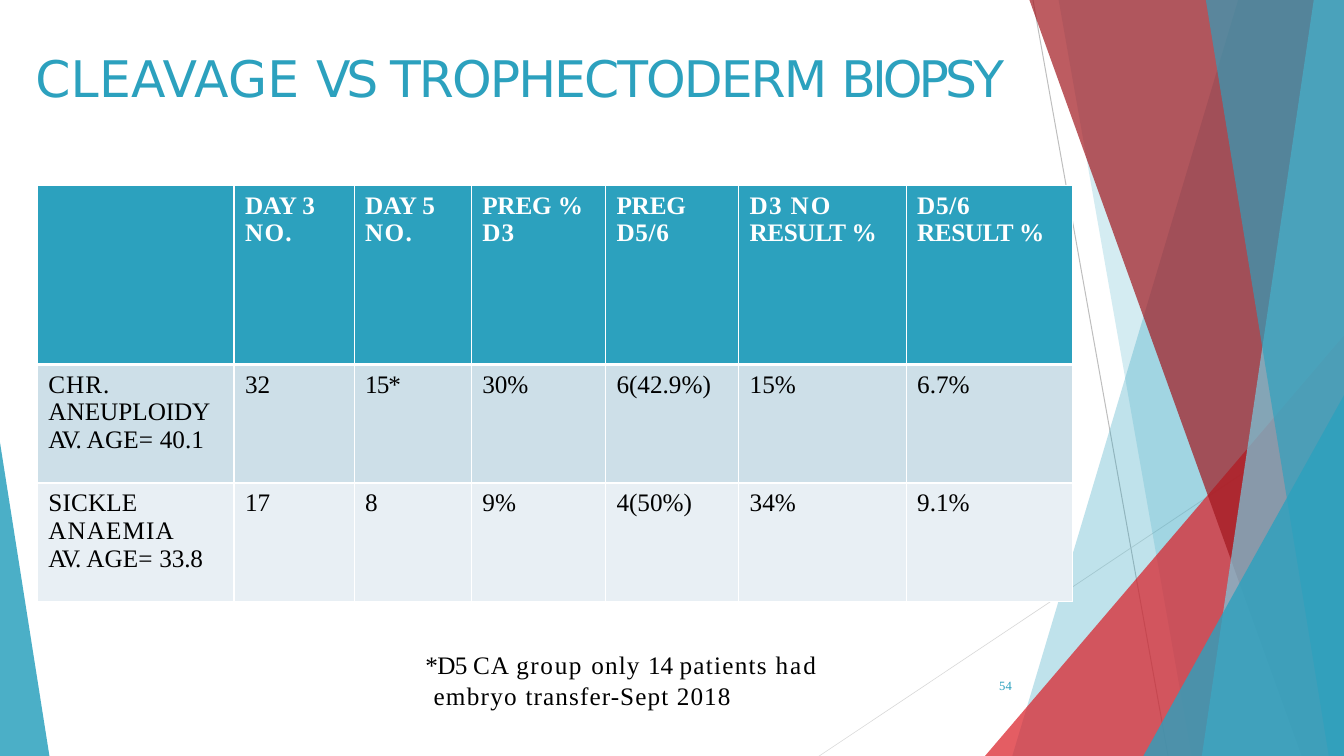
import dataclasses

import pptx
import pptx.dml.color
import pptx.enum.text
import pptx.oxml
import pptx.oxml.ns
import pptx.util

Inches = pptx.util.Inches
Pt = pptx.util.Pt


@dataclasses.dataclass(frozen=True)
class Theme:
    teal: str = "2CA1BE"
    sky: str = "79CADF"
    red: str = "DA1F28"
    dark_red: str = "A2171E"
    gray: str = "BEBEBE"
    light_gray: str = "D9D9D9"
    white: str = "FFFFFF"
    black: str = "000000"
    band_dark: str = "CDDFE8"
    band_light: str = "E8EFF4"
    title_font: str = "DejaVu Sans"
    body_font: str = "Times New Roman"
    title_size: float = 36
    body_size: float = 18
    number_size: float = 9


THEME = Theme()

# Table text: cells hold paragraphs, paragraphs hold (text, letter spacing) runs
NO = [("NO.", 0.9)]
RESULT = [("RESULT ", -0.3), ("%", -2)]
HEADER = [
    [],
    [[("DAY ", -0.1), ("3", 0)], NO],
    [[("DAY ", -0.1), ("5", 0)], NO],
    [[("PREG ", -0.1), ("%", -2)], [("D3", 0.9)]],
    [[("PREG", -0.1)], [("D5/6", 0.5)]],
    [[("D3 ", 0.9), ("NO", 1.5)], RESULT],
    [[("D5/6", 0.5)], RESULT],
]
ANEUPLOIDY = [[("CHR.", 0.7)], [("ANEUPL", 0), ("OIDY", -0.1)],
              [("AV. ", -1), ("AGE= ", 0.1), ("40.1", 0)]]
SICKLE = [[("SICKLE", 0.1)], [("ANAEMIA", 0.8)],
          [("AV. ", -1.1), ("AGE= ", 0.1), ("33.8", -0.1)]]
ANEUPLOIDY_VALUES = [("32", 0), ("15*", -0.7), ("30%", 0), ("6(42.9%)", 0),
                     ("15%", 0), ("6.7%", 0)]
SICKLE_VALUES = [("17", 0), ("8", 0), ("9%", 0.1), ("4(50%)", 0),
                 ("34%", 0), ("9.1%", 0)]
COLUMNS = [1.95, 1.19, 1.16, 1.33, 1.32, 1.66, 1.65]
ROWS = [1.78, 1.18, 1.18]


def rgb(color):
    return pptx.dml.color.RGBColor.from_string(color)


def write(tf, paragraphs, *, size, color, font=THEME.body_font, bold=False, gap=0):
    """Fill a text frame with paragraphs of (text, letter spacing) runs."""
    for i, runs in enumerate(paragraphs):
        p = tf.paragraphs[0] if i == 0 else tf.add_paragraph()
        p.alignment = pptx.enum.text.PP_ALIGN.LEFT
        p.space_before = Pt(gap if i else 0)
        for text, spacing in runs:
            r = p.add_run()
            r.text = text
            r.font.name, r.font.size, r.font.bold = font, Pt(size), bold
            r.font.color.rgb = rgb(color)
            r._r.get_or_add_rPr().set("spc", str(round(spacing * 100)))


def frame(tf):
    tf.word_wrap = True
    tf.auto_size = pptx.enum.text.MSO_AUTO_SIZE.NONE
    tf.vertical_anchor = pptx.enum.text.MSO_ANCHOR.TOP
    tf.margin_left = tf.margin_right = tf.margin_bottom = 0
    tf.margin_top = Inches(0.02)
    return tf


def polygon(s, points, color, opacity=100):
    corners = [(Inches(x), Inches(y)) for x, y in points]
    builder = s.shapes.build_freeform(*corners[0], scale=1.0)
    builder.add_line_segments(corners[1:], close=True)
    sp = builder.convert_to_shape()
    sp.shadow.inherit = False
    sp.line.fill.background()
    sp.fill.solid()
    sp.fill.fore_color.rgb = rgb(color)
    if opacity < 100:
        clr = sp.fill._xPr.find(".//" + pptx.oxml.ns.qn("a:srgbClr"))
        clr.append(pptx.oxml.parse_xml(
            f'<a:alpha {pptx.oxml.ns.nsdecls("a")} val="{opacity * 1000}"/>'))


def add_ribbons(s, x, y, w, h):
    right, bottom = x + w, y + h
    # Hairlines behind the ribbons
    polygon(s, [(right - 3.09, y), (right - 3.08, y),
                (right - 1.74, bottom), (right - 1.75, bottom)], THEME.gray)
    polygon(s, [(right, y + 4.02), (right, y + 4.03),
                (right - 5.2, bottom), (right - 5.21, bottom)], THEME.light_gray)
    # Ribbons on the right edge: distance from it at top, top, distance at bottom
    for top_gap, top, bottom_gap, color, opacity in [
        (1.05, 0, 3.29, THEME.teal, 30),
        (2.83, 0, 1.51, THEME.teal, 20),
        (0, 3.33, 3.56, THEME.red, 72),
        (3.12, 0, 0.42, THEME.dark_red, 70),
        (0.3, 0, 1.41, THEME.sky, 70),
        (1.37, 0, 0.15, THEME.teal, 65),
        (0, 3.92, 1.99, THEME.teal, 80),
    ]:
        polygon(s, [(right - top_gap, y + top), (right - bottom_gap, bottom),
                    (right, bottom), (right, y + top)], color, opacity)
    # Wedge in the lower left corner
    polygon(s, [(x, bottom - 3.11), (x, bottom), (x + 0.49, bottom)], THEME.teal, 85)


def add_title(s, x, y, w, h):
    sp = s.shapes.title
    sp.left, sp.top, sp.width, sp.height = map(Inches, (x, y, w, h))
    runs = [("CLEAVAGE ", 0.2), ("VS ", -3), ("TROPHECTODERM ", -1.4), ("BIOPSY", -2.8)]
    write(frame(sp.text_frame), [runs], size=THEME.title_size, color=THEME.teal,
          font=THEME.title_font)


def set_borders(cell, top, bottom):
    tcPr = cell._tc.get_or_add_tcPr()
    for side, width in zip("LRTB", (1, 1, top, bottom)):
        tcPr.append(pptx.oxml.parse_xml(
            f'<a:ln{side} {pptx.oxml.ns.nsdecls("a")} w="{Pt(width)}"><a:solidFill>'
            f'<a:srgbClr val="{THEME.white}"/></a:solidFill></a:ln{side}>'))


def add_results_table(s, x, y, w, h):
    rows = [HEADER] + [
        [label] + [[[value]] for value in values]
        for label, values in [(ANEUPLOIDY, ANEUPLOIDY_VALUES), (SICKLE, SICKLE_VALUES)]]
    fills = [THEME.teal, THEME.band_dark, THEME.band_light]
    borders = [(1, 3), (3, 1), (1, 1)]
    table = s.shapes.add_table(len(ROWS), len(COLUMNS),
                               *map(Inches, (x, y, w, h))).table
    for column, width in zip(table.columns, COLUMNS):
        column.width = Inches(width * w / sum(COLUMNS))
    for i, row in enumerate(rows):
        table.rows[i].height = Inches(ROWS[i] * h / sum(ROWS))
        for j, paragraphs in enumerate(row):
            cell = table.cell(i, j)
            cell.margin_left, cell.margin_top = Inches(0.11), Inches(0.06)
            cell.margin_right = cell.margin_bottom = 0
            set_borders(cell, *borders[i])
            cell.fill.solid()
            cell.fill.fore_color.rgb = rgb(fills[i])
            write(cell.text_frame, paragraphs, size=THEME.body_size, bold=i == 0,
                  color=THEME.black if i else THEME.white)


def add_page_number(s, x, y, w, h):
    sp = s.shapes.add_textbox(*map(Inches, (x, y, w, h)))
    write(frame(sp.text_frame), [[("54", 0.1)]], size=THEME.number_size, color=THEME.teal)


def add_footnote(s, x, y, w, h):
    tf = frame(s.shapes.add_textbox(*map(Inches, (x, y, w, h))).text_frame)
    first = [("*D5 ", -0.5), ("CA ", 0.8), ("group ", 1.2), ("only ", 0.8),
             ("14 ", 0), ("patients ", 0.9), ("had", 1.4)]
    second = [("embryo ", 0.9), ("transfer-Sept 2018", 0.8)]
    write(tf, [first, second], size=THEME.body_size, color=THEME.black, gap=1)
    tf.paragraphs[1]._p.get_or_add_pPr().set("marL", str(Inches(0.08)))


def main():
    prs = pptx.Presentation()
    prs.slide_width, prs.slide_height = Inches(13.33), Inches(7.5)
    s = prs.slides.add_slide(prs.slide_layouts[5])
    add_ribbons(s, 0, 0, 13.33, 7.5)
    add_title(s, 0.35, 0.45, 9.73, 0.63)
    add_results_table(s, 0.37, 1.84, 10.27, 4.13)
    add_page_number(s, 9.91, 6.71, 0.15, 0.18)
    add_footnote(s, 4.22, 6.42, 3.9, 0.63)
    prs.save("out.pptx")


if __name__ == "__main__":
    main()
